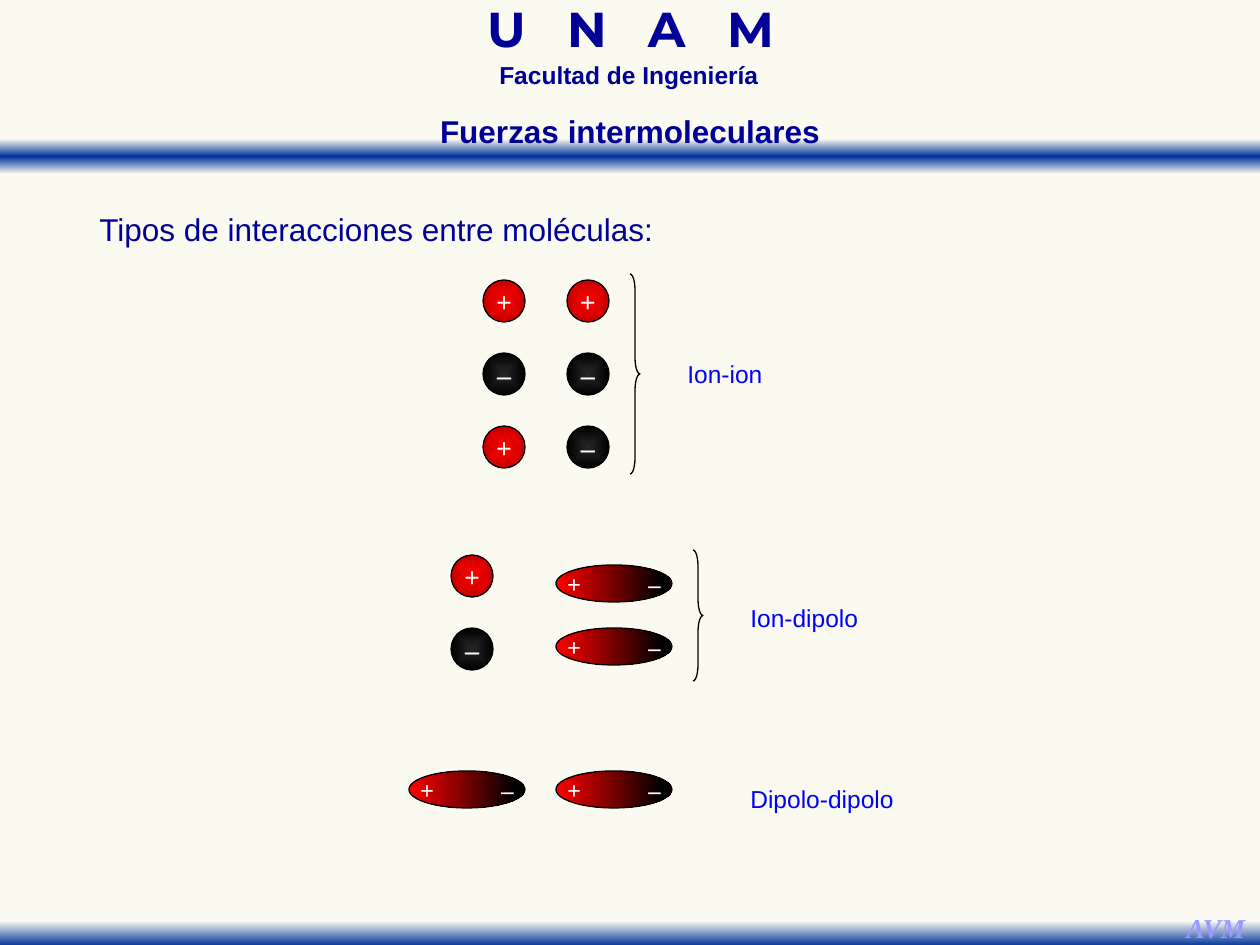
from pptx import Presentation
from pptx.dml.color import RGBColor
from pptx.enum.shapes import MSO_SHAPE
from pptx.enum.text import MSO_ANCHOR, PP_ALIGN
from pptx.oxml import parse_xml
from pptx.oxml.ns import nsdecls, qn
from pptx.util import Pt

SCALE = 914400 / 126  # EMU in one px

RECT, OVAL, BRACE = MSO_SHAPE.RECTANGLE, MSO_SHAPE.OVAL, MSO_SHAPE.LEFT_BRACE
LEFT, MID, FULL = PP_ALIGN.LEFT, PP_ALIGN.CENTER, PP_ALIGN.JUSTIFY
TOP, MIDDLE = MSO_ANCHOR.TOP, MSO_ANCHOR.MIDDLE

CREAM = RGBColor(0xFA, 0xFA, 0xF0)
PALE = RGBColor(0xFA, 0xFA, 0xF2)
BLUE = RGBColor(0x00, 0x33, 0x99)
NAVY = RGBColor(0x00, 0x00, 0x99)
LINK = RGBColor(0x00, 0x00, 0xFF)
LILAC = RGBColor(0x99, 0x99, 0xFF)
RED = RGBColor(0xFF, 0x00, 0x00)
DARK = RGBColor(0xC5, 0x00, 0x00)
GREY = RGBColor(0x26, 0x26, 0x26)
BLACK = RGBColor(0x00, 0x00, 0x00)
WHITE = RGBColor(0xFF, 0xFF, 0xFF)

SANS, SERIF, LOGO = "Arial", "Times New Roman", "Montserrat"
RADIAL = ('<a:path path="shape"><a:fillToRect l="50000" t="50000" '
          'r="50000" b="50000"/></a:path>')
ACROSS = '<a:lin ang="0" scaled="0"/>'
DOWN = '<a:lin ang="5400000" scaled="0"/>'


def emu(*sizes):
    return [round(size * SCALE) for size in sizes]


class Deck:
    """Holds the style and the current slide; lengths are in px."""

    def __init__(self, wide, high):
        self.prs = Presentation()
        self.prs.slide_width, self.prs.slide_height = emu(wide, high)
        self.slide = self.prs.slides.add_slide(self.prs.slide_layouts[5])
        self.shapes = self.slide.shapes
        back = self.slide.background.fill
        back.solid()
        back.fore_color.rgb = CREAM

    def label(self, shape, text, size, color, font=SANS, bold=False,
              italic=False, align=LEFT, anchor=TOP, wrap=True, line=None,
              gap=0):
        """Set one paragraph; gap adds points after each letter but the last."""
        frame = shape.text_frame
        frame.word_wrap, frame.vertical_anchor = wrap, anchor
        para = frame.paragraphs[0]
        for part in (text[:-1], text[-1]) if gap else (text,):
            para.add_run().text = part
        if gap:
            props = para.runs[0].font._element
            props.set("spc", str(round(gap * 100)))
        para.alignment = align
        if line:
            para.line_spacing = line
        look = para.font
        look.size, look.name, look.bold = Pt(size), font, bold
        look.italic = italic
        look.color.rgb = color

    def text(self, box, text, size, color, **style):
        shape = self.shapes.add_textbox(*emu(*box))
        self.label(shape, text, size, color, **style)

    def title(self, box, text, size, color, **style):
        """Format the title and bring it in front of the shapes so far."""
        shape = self.shapes.title
        shape.left, shape.top, shape.width, shape.height = emu(*box)
        self.label(shape, text, size, color, **style)
        self.shapes._spTree.append(shape._element)

    def shape(self, kind, box, line=None):
        shape = self.shapes.add_shape(kind, *emu(*box))
        shape.shadow.inherit = False
        if line is None:
            shape.line.fill.background()
        else:
            shape.line.color.rgb = line
            shape.line.width = Pt(0.75)
        return shape

    def blend(self, shape, stops, way):
        """Fill with a gradient of (percent, colour) stops."""
        shape.fill.gradient()
        old = shape._element.spPr.find(qn("a:gradFill"))
        marks = "".join(
            f'<a:gs pos="{pos * 1000}"><a:srgbClr val="{color}"/></a:gs>'
            for pos, color in stops)
        new = parse_xml(f'<a:gradFill {nsdecls("a")} rotWithShape="1">'
                        f'<a:gsLst>{marks}</a:gsLst>{way}</a:gradFill>')
        old.getparent().replace(old, new)

    def bar(self, top, stops):
        self.blend(self.shape(RECT, (0, top, 1260, 35)), stops, DOWN)

    def ion(self, left, top, sign):
        core, rim = (RED, DARK) if sign == "+" else (GREY, BLACK)
        ball = self.shape(OVAL, (left, top, 42, 42), BLACK)
        self.blend(ball, [(0, core), (100, rim)], RADIAL)
        self.label(ball, sign, 16, WHITE, font=SERIF, bold=True, align=MID,
                   anchor=MIDDLE, wrap=False)

    def dipole(self, left, top):
        oval = self.shape(OVAL, (left, top, 116, 37), BLACK)
        self.blend(oval, [(0, RED), (91, BLACK)], ACROSS)
        self.label(oval, "+ –", 14, WHITE, font=SERIF, bold=True, align=MID,
                   anchor=MIDDLE, wrap=False, gap=17.5)

    def brace(self, left, top, high):
        """Draw a brace that points right, with bends 16 px tall."""
        wide = 10
        shape = self.shape(BRACE, (left, top, wide, high), BLACK)
        shape.fill.background()
        shape.rotation = 180
        shape.adjustments[0] = 16 / wide


def main():
    deck = Deck(1260, 945)

    deck.bar(139, [(0, PALE), (50, BLUE), (100, PALE)])
    deck.text((384, 8, 493, 54), "U N A M", 28, NAVY, font=LOGO, bold=True,
              align=MID, line=0.7, gap=7.9)
    deck.text((404, 62, 450, 34), "Facultad de Ingeniería", 14, NAVY,
              bold=True, align=MID, line=0.7)
    deck.bar(911, [(28, PALE), (100, BLUE)])
    deck.text((1173, 905, 86, 47), "AVM", 15.6, LILAC, font=SERIF, bold=True,
              italic=True, align=MID, wrap=False)
    deck.title((357, 106, 546, 50), "Fuerzas intermoleculares", 18, NAVY,
               bold=True, align=MID)
    deck.text((87, 204, 682, 50), "Tipos de interacciones entre moléculas:",
              18, NAVY, align=FULL)

    step = 73
    for row, pair in enumerate(("++", "––", "+–")):
        for col, sign in enumerate(pair):
            deck.ion(483 + col * 84, 280 + row * step, sign)
    deck.brace(630, 274, 200)

    for row, sign in enumerate("+–"):
        deck.ion(451, 555 + row * step, sign)
        deck.dipole(556, 565 + row * 63)
    deck.brace(693, 550, 131)

    for left in (409, 556):
        deck.dipole(left, 771)

    for left, top, wide, name in ((675, 353, 130, "Ion-ion"),
                                  (738, 597, 154, "Ion-dipolo"),
                                  (738, 778, 189, "Dipolo-dipolo")):
        deck.text((left, top, wide, 43), name, 14, LINK)

    deck.prs.save("out.pptx")


if __name__ == "__main__":
    main()
